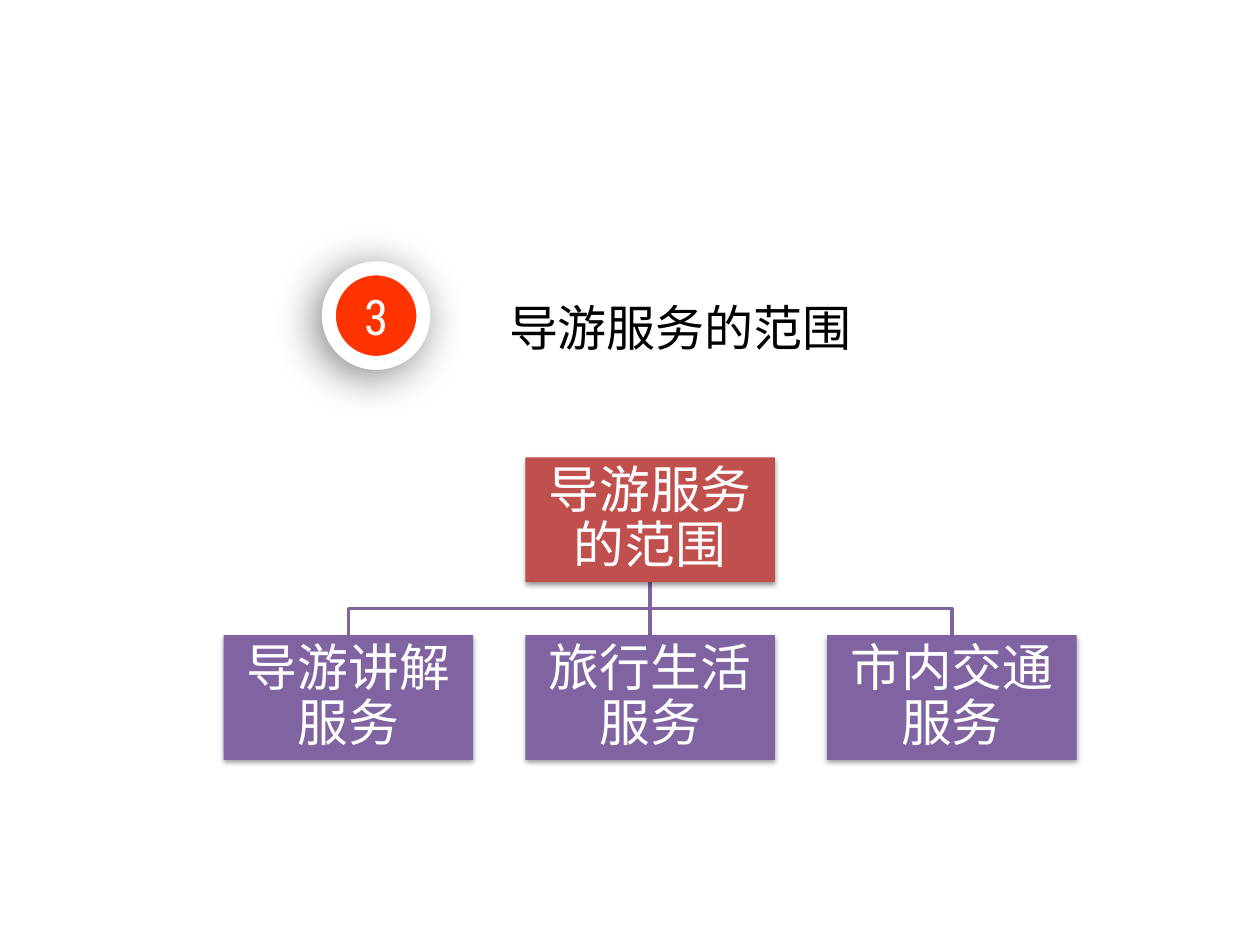
from pptx import Presentation
from pptx.dml.color import RGBColor
from pptx.enum.shapes import MSO_CONNECTOR, MSO_SHAPE
from pptx.enum.text import MSO_ANCHOR, PP_ALIGN
from pptx.oxml.ns import qn
from pptx.util import Inches, Pt
from lxml import etree

RECTANGLE, OVAL = MSO_SHAPE.RECTANGLE, MSO_SHAPE.OVAL
STRAIGHT = MSO_CONNECTOR.STRAIGHT
CENTER, LEFT = PP_ALIGN.CENTER, PP_ALIGN.LEFT
MIDDLE, TOP = MSO_ANCHOR.MIDDLE, MSO_ANCHOR.TOP

WIDTH, HEIGHT = Inches(10), Inches(7.5)
COLUMNS, ROWS = 100, 75
TITLE_LAYOUT = 5
COLORS = {"root": "C0504D", "branch": "8064A2", "badge": "FF3300",
          "white": "FFFFFF", "black": "000000"}
CJK_FONT = "Noto Sans CJK SC"


def color(name):
    return RGBColor.from_string(COLORS[name])


def write(frame, text, size, font=CJK_FONT, ink="white", align=CENTER,
          anchor=MIDDLE, insets=(0.1, 0.05), line_spacing=1.0):
    """Fill a text frame with one formatted paragraph; insets are in inches."""
    frame.word_wrap = True
    frame.vertical_anchor = anchor
    frame.margin_left = frame.margin_right = Inches(insets[0])
    frame.margin_top = frame.margin_bottom = Inches(insets[1])
    paragraph = frame.paragraphs[0]
    paragraph.alignment = align
    paragraph.line_spacing = line_spacing
    paragraph.space_before = Pt(0)
    run = paragraph.add_run()
    run.text = text
    run.font.size = Pt(size)
    run.font.name = font
    run.font.color.rgb = color(ink)
    east_asian = etree.SubElement(run.font._element, qn("a:ea"))
    east_asian.set("typeface", CJK_FONT)


def cast_shadow(shape, opacity, blur, distance, angle):
    """Give a shape a black outer shadow: percent, points, points, degrees."""
    shape.shadow.inherit = False
    effects = shape._element.spPr.find(qn("a:effectLst"))
    shadow = etree.SubElement(
        effects, qn("a:outerShdw"), blurRad=str(Pt(blur)),
        dist=str(Pt(distance)), dir=str(angle * 60000), rotWithShape="0")
    black = etree.SubElement(shadow, qn("a:srgbClr"), val=COLORS["black"])
    etree.SubElement(black, qn("a:alpha"), val=str(opacity * 1000))


class ChartSlide:
    """A slide on a 100 by 75 grid, with the style of its organisation chart."""

    box_width, box_height = 19.8, 9.9
    line_width = Pt(2)

    def __init__(self, deck):
        self.slide = deck.slides.add_slide(deck.slide_layouts[TITLE_LAYOUT])
        self.shapes = self.slide.shapes

    def point(self, column, row):
        return round(column * WIDTH / COLUMNS), round(row * HEIGHT / ROWS)

    def title(self, text, column, row, width, height):
        heading = self.shapes.title
        heading.left, heading.top = self.point(column, row)
        heading.width, heading.height = self.point(width, height)
        write(heading.text_frame, text, 28, font="Calibri", ink="black",
              align=LEFT, anchor=TOP)

    def badge(self, number, column, row, diameter):
        circle = self.shapes.add_shape(
            OVAL, *self.point(column, row), *self.point(diameter, diameter))
        circle.fill.solid()
        circle.fill.fore_color.rgb = color("badge")
        circle.line.color.rgb = color("white")
        circle.line.width = Pt(8)
        cast_shadow(circle, opacity=49, blur=25, distance=5, angle=135)
        write(circle.text_frame, number, 28, font="Roboto Condensed")

    def box(self, text, center, row, fill):
        node = self.shapes.add_shape(
            RECTANGLE, *self.point(center - self.box_width / 2, row),
            *self.point(self.box_width, self.box_height))
        node.fill.solid()
        node.fill.fore_color.rgb = color(fill)
        node.line.fill.background()
        cast_shadow(node, opacity=38, blur=3.1, distance=1.6, angle=90)
        write(node.text_frame, text, 29, insets=(0.02, 0.02), line_spacing=0.9)

    def link(self, parent, child, top, bottom):
        """Join two box centres, with a bend halfway when they differ."""
        start, end = self.point(parent, top), self.point(child, bottom)
        if parent == child:
            line = self.shapes.add_connector(STRAIGHT, *start, *end)
        else:
            middle = (top + bottom) / 2
            outline = self.shapes.build_freeform(*start)
            outline.add_line_segments(
                [self.point(parent, middle), self.point(child, middle), end],
                close=False)
            line = outline.convert_to_shape()
            line.fill.background()
        line.line.color.rgb = color("branch")
        line.line.width = self.line_width
        etree.SubElement(line._element.spPr, qn("a:effectLst"))


def main():
    deck = Presentation()
    deck.slide_width, deck.slide_height = WIDTH, HEIGHT
    page = ChartSlide(deck)

    topic = "导游服务的范围"
    services = ["导游讲解服务", "旅行生活服务", "市内交通服务"]
    root_center, spacing = 51.6, 23.95
    root_row, service_row = 36.3, 50.4
    centers = [root_center + (i - 1) * spacing for i in range(len(services))]

    for center in centers:
        page.link(root_center, center, root_row + page.box_height, service_row)
    page.box(topic, root_center, root_row, "root")
    for service, center in zip(services, centers):
        page.box(service, center, service_row, "branch")

    page.badge("3", 26.1, 21.3, 7.5)
    page.title(topic, 39.4, 23.1, 40.9, 5.7)
    deck.save("out.pptx")


if __name__ == "__main__":
    main()
